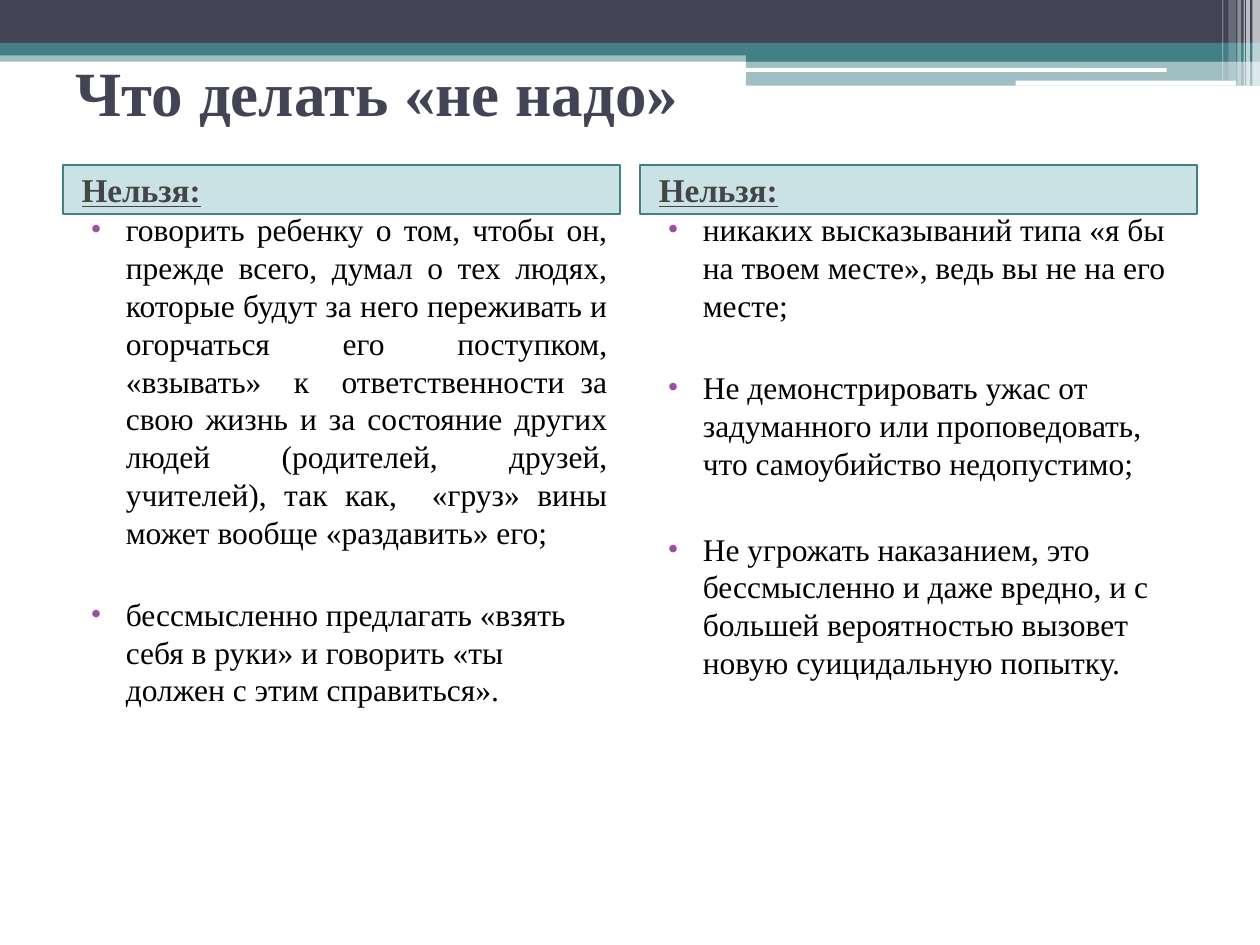
from lxml import etree
from pptx import Presentation, util as u
from pptx.dml.color import RGBColor
from pptx.enum import shapes, text
from pptx.oxml.ns import qn

THEME = {
    "font": "Times New Roman",
    "navy": "424456", "teal": "438086", "tint": "328E97", "white": "FFFFFF",
    "heading": "454545", "body": "000000", "bullet": "A04DA3",
    "title_size": 36, "heading_size": 19, "body_size": 18,
}
MARGIN, COLUMN, GAP = 0.5, 4.42, 0.16
HEADING_TOP, HEADING_HEIGHT = 1.31, 0.39
BODY_TOP, BODY_HEIGHT = 1.62, 5.08


def add_box(left, top, width, height, color, alpha=100, rounded=False):
    """Add a borderless filled rectangle; alpha is opacity in percent."""
    kind = shapes.MSO_SHAPE.ROUNDED_RECTANGLE if rounded else shapes.MSO_SHAPE.RECTANGLE
    shape = slide.shapes.add_shape(kind, *map(u.Inches, (left, top, width, height)))
    shape.shadow.inherit = False
    shape.fill.solid()
    shape.fill.fore_color.rgb = RGBColor.from_string(color)
    shape.line.fill.background()
    if alpha < 100:
        srgb = shape.fill._xPr.find(".//" + qn("a:srgbClr"))
        etree.SubElement(srgb, qn("a:alpha"), val=str(alpha * 1000))
    return shape


def write(paragraph, content, size, color, bold=False, underline=False, align="LEFT",
          before=0, line=None, margin=0, hanging=0, bullet=None):
    """Fill a paragraph; spacing is in points, margins in inches."""
    run = paragraph.add_run()
    run.text = content
    run.font.name = THEME["font"]
    run.font.size = u.Pt(size)
    run.font.bold = bold
    run.font.underline = underline
    run.font.color.rgb = RGBColor.from_string(color)
    paragraph.alignment = getattr(text.PP_ALIGN, align)
    paragraph.space_before = u.Pt(before)
    if line:
        paragraph.line_spacing = u.Pt(line)
    properties = paragraph._p.get_or_add_pPr()
    properties.set("marL", str(u.Inches(margin)))
    properties.set("indent", str(u.Inches(-hanging)))
    if bullet:
        bullet_color = etree.SubElement(properties, qn("a:buClr"))
        etree.SubElement(bullet_color, qn("a:srgbClr"), val=THEME["bullet"])
        etree.SubElement(properties, qn("a:buFont"), typeface=THEME["font"])
        etree.SubElement(properties, qn("a:buChar"), char=bullet)


presentation = Presentation()
presentation.slide_width, presentation.slide_height = u.Inches(10), u.Inches(7.5)
slide = presentation.slides.add_slide(presentation.slide_layouts[5])

# Header bands
for left, top, width, height, color, alpha in [
    (0, 0.4, 10, 0.09, "teal", 50),
    (0, 0, 10, 0.34, "navy", 100),
    (0, 0.34, 10, 0.1, "teal", 100),
    (5.92, 0.39, 4.08, 0.1, "teal", 100),
    (5.92, 0.48, 4.08, 0.2, "teal", 50),
]:
    add_box(left, top, width, height, THEME[color], alpha)
for left, top, width, height in [(5.91, 0.54, 3.35, 0.03), (8.06, 0.64, 1.75, 0.04)]:
    add_box(left, top, width, height, THEME["white"], rounded=True)

# Pale vertical stripes at the right end of the header
for left, width, height, alpha in [
    (9.94, 0.06, 0.68, 65), (9.89, 0.03, 0.68, 65), (9.87, 0.01, 0.68, 60),
    (9.82, 0.03, 0.68, 40), (9.75, 0.06, 0.64, 20), (9.7, 0.01, 0.64, 30),
]:
    add_box(left, 0, width, height, THEME["white"], alpha)

# Title, in front of the bands
title = slide.shapes.title
title.left, title.top, title.width, title.height = map(u.Inches, (MARGIN, 0.3, 9, 0.85))
title.text_frame.vertical_anchor = text.MSO_ANCHOR.MIDDLE
write(title.text_frame.paragraphs[0], "Что делать «не надо»",
      THEME["title_size"], THEME["navy"], bold=True)
slide.shapes._spTree.append(title._element)

# Two columns: each item has its text, alignment and space before
columns = [
    [
        ("говорить ребенку о том, чтобы он, прежде всего, думал о тех людях, которые "
         "будут за него переживать и огорчаться его поступком, «взывать»  к  "
         "ответственности за свою жизнь и за состояние других людей (родителей, "
         "друзей, учителей), так как,  «груз» вины может вообще «раздавить» его;",
         "JUSTIFY", 3),
        ("бессмысленно предлагать «взять себя в руки» и говорить «ты должен с этим "
         "справиться».", "LEFT", 25.3),
    ],
    [
        ("никаких высказываний типа «я бы на твоем месте», ведь вы не на его месте;",
         "LEFT", 3),
        ("Не демонстрировать ужас от задуманного или проповедовать, что самоубийство "
         "недопустимо;", "LEFT", 25.3),
        ("Не угрожать наказанием, это бессмысленно и даже вредно, и с большей "
         "вероятностью вызовет новую суицидальную попытку.", "LEFT", 27.5),
    ],
]
for index, items in enumerate(columns):
    left = MARGIN + index * (COLUMN + GAP)
    heading = add_box(left, HEADING_TOP, COLUMN, HEADING_HEIGHT, THEME["tint"], 25)
    heading.line.color.rgb = RGBColor.from_string(THEME["teal"])
    heading.line.width = u.Pt(1)
    heading.text_frame.vertical_anchor = text.MSO_ANCHOR.MIDDLE
    write(heading.text_frame.paragraphs[0], "Нельзя:", THEME["heading_size"],
          THEME["heading"], bold=True, underline=True, before=3, margin=0.05)

    body = slide.shapes.add_textbox(
        *map(u.Inches, (left, BODY_TOP, COLUMN, BODY_HEIGHT))).text_frame
    body.word_wrap = True
    for number, (content, align, before) in enumerate(items):
        paragraph = body.add_paragraph() if number else body.paragraphs[0]
        write(paragraph, content, THEME["body_size"], THEME["body"], align=align,
              before=before, line=21.6, margin=0.4, hanging=0.28, bullet="•")

presentation.save("out.pptx")
